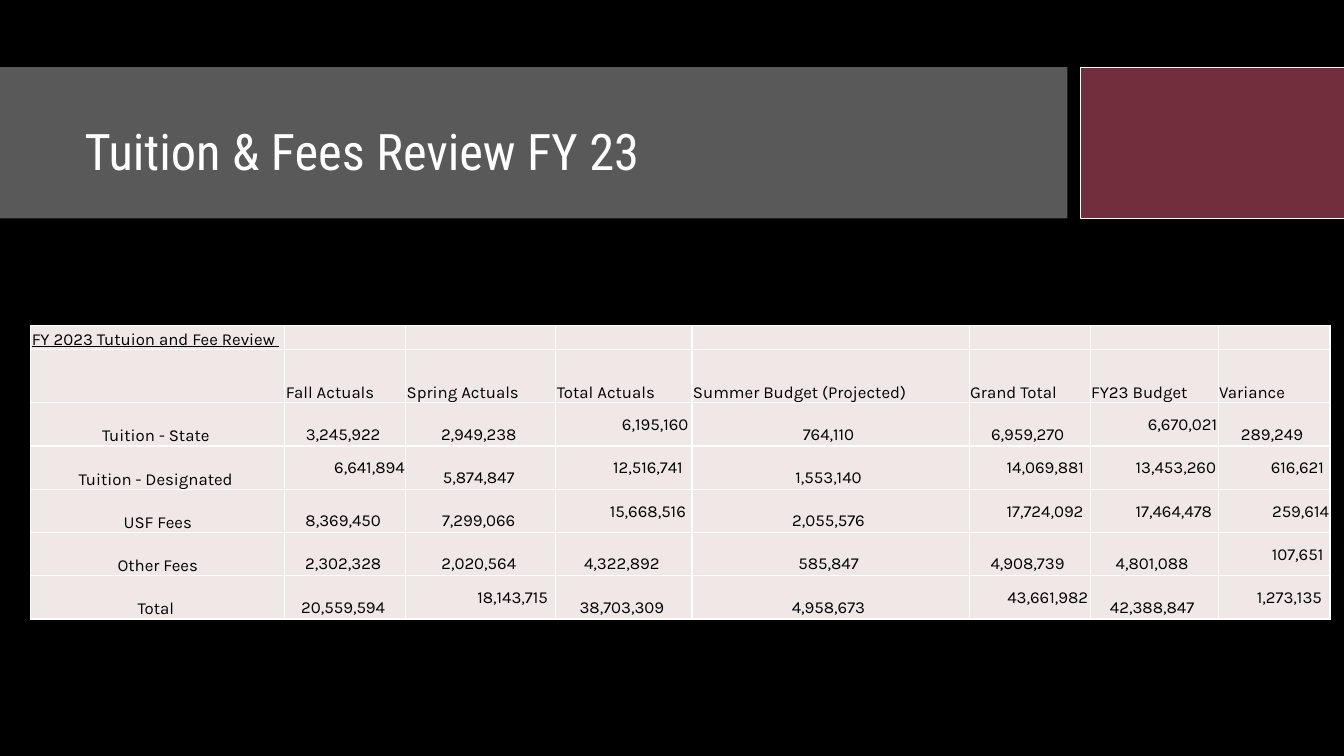
import pptx
import pptx.dml.color
import pptx.enum.shapes
import pptx.enum.text
import pptx.oxml
import pptx.oxml.ns
import pptx.util

Pt = pptx.util.Pt
ALIGN = pptx.enum.text.PP_ALIGN
ANCHOR = pptx.enum.text.MSO_ANCHOR
COLORS = {"black": "000000", "white": "FFFFFF", "grey": "595959",
          "maroon": "722E3C", "cell": "F0E8E7"}
TITLE_FONT, TABLE_FONT = "Roboto Condensed", "Karla"
FONT_SIZE = 12
INSET = 0.72
NAMESPACE = pptx.oxml.ns.nsdecls("a")

COLUMN_WIDTHS = [181.44, 86.4, 107.28, 97.2, 198, 86.4, 91.44, 79.92]
ROW_HEIGHTS = [17.3, 38] + [30.9] * 5
ROWS = [
    ["FY 2023 Tutuion and Fee Review "] + [""] * 7,
    ["", "Fall Actuals", "Spring Actuals", "Total Actuals",
     "Summer Budget (Projected)", "Grand Total", "FY23 Budget", "Variance"],
    ["Tuition - State ", "3,245,922", "2,949,238", "6,195,160",
     "764,110", "6,959,270", "6,670,021", "289,249"],
    ["Tuition - Designated ", "6,641,894", "5,874,847", "12,516,741",
     "1,553,140", "14,069,881", "13,453,260", "616,621"],
    ["USF Fees", "8,369,450", "7,299,066", "15,668,516",
     "2,055,576", "17,724,092", "17,464,478", "259,614"],
    ["Other Fees", "2,302,328", "2,020,564", "4,322,892",
     "585,847", "4,908,739", "4,801,088", "107,651"],
    ["Total ", "20,559,594", "18,143,715", "38,703,309",
     "4,958,673", "43,661,982", "42,388,847", "1,273,135"],
]
# Figures set to the right at mid-height: (row, column) -> right inset
RIGHT_FIGURES = {
    (2, 3): 2.5, (2, 6): 0.7,
    (3, 1): 0.7, (3, 3): 6.5, (3, 5): 4.3, (3, 6): 1.4, (3, 7): 4.3,
    (4, 3): 4.3, (4, 5): 4.7, (4, 6): 4.3, (4, 7): 0.7,
    (5, 7): 4.7,
    (6, 2): 5.7, (6, 5): 1.4, (6, 7): 5.7,
}


def rgb(name):
    return pptx.dml.color.RGBColor.from_string(COLORS[name])


def format_runs(paragraph, font_name, size, color):
    for run in paragraph.runs:
        run.font.name = font_name
        run.font.size = Pt(size)
        run.font.color.rgb = rgb(color)


def add_band(slide, left, top, width, height, color):
    band = slide.shapes.add_shape(pptx.enum.shapes.MSO_SHAPE.RECTANGLE,
                                  Pt(left), Pt(top), Pt(width), Pt(height))
    band.shadow.inherit = False
    band.fill.solid()
    band.fill.fore_color.rgb = rgb(color)
    band.line.fill.background()
    return band


def add_header(slide, left, top, width, height):
    # Grey title band and maroon accent
    grey_width, gap = 762.5, 9.3
    add_band(slide, left, top, grey_width, height, "grey")
    accent_left = left + grey_width + gap
    accent = add_band(slide, accent_left, top, left + width - accent_left,
                      height, "maroon")
    accent.line.color.rgb = rgb("white")
    accent.line.width = Pt(0.5)

    # Title in front of the band
    title = slide.shapes.title
    title.element.getparent().append(title.element)
    title.left, title.top = Pt(left + 53.3), Pt(top + 19.5)
    title.width, title.height = Pt(703.4), Pt(85)
    title.text_frame.text = "Tuition & Fees Review FY 23"
    title.text_frame.word_wrap = True
    title.text_frame.vertical_anchor = ANCHOR.MIDDLE
    paragraph = title.text_frame.paragraphs[0]
    paragraph.alignment = ALIGN.LEFT
    paragraph.line_spacing = 0.9
    format_runs(paragraph, TITLE_FONT, 36, "white")


def style_cell(cell):
    properties = cell._tc.get_or_add_tcPr()
    for side in ("lnL", "lnR", "lnT", "lnB"):
        properties.append(pptx.oxml.parse_xml(
            f'<a:{side} {NAMESPACE} w="12700"><a:solidFill>'
            f'<a:srgbClr val="{COLORS["white"]}"/></a:solidFill></a:{side}>'))
    cell.fill.solid()
    cell.fill.fore_color.rgb = rgb("cell")
    cell.margin_left = cell.margin_right = cell.margin_top = Pt(INSET)
    cell.margin_bottom = 0
    cell.vertical_anchor = ANCHOR.BOTTOM


def fill_cell(cell, row, column, text):
    style_cell(cell)
    paragraph = cell.text_frame.paragraphs[0]
    if not text:
        # Keeps an empty cell from stretching its row
        paragraph._p.append(pptx.oxml.parse_xml(
            f'<a:endParaRPr {NAMESPACE} sz="{FONT_SIZE * 100}"/>'))
        return
    paragraph.text = text
    format_runs(paragraph, TABLE_FONT, FONT_SIZE, "black")
    if row == 0:
        paragraph.runs[0].font.underline = True
    elif (row, column) in RIGHT_FIGURES:
        paragraph.alignment = ALIGN.RIGHT
        cell.margin_right = Pt(RIGHT_FIGURES[row, column])
        cell.vertical_anchor = ANCHOR.MIDDLE
    elif row > 1:
        paragraph.alignment = ALIGN.CENTER
        if column > 0:
            cell.margin_right = Pt(3.6)
            cell.margin_bottom = Pt(1.2)


def add_fee_table(slide, left, top):
    table = slide.shapes.add_table(
        len(ROWS), len(COLUMN_WIDTHS), Pt(left), Pt(top),
        Pt(sum(COLUMN_WIDTHS)), Pt(sum(ROW_HEIGHTS))).table
    table.first_row = table.horz_banding = False
    for column, width in zip(table.columns, COLUMN_WIDTHS):
        column.width = Pt(width)
    for row, height in zip(table.rows, ROW_HEIGHTS):
        row.height = Pt(height)
    for row, texts in enumerate(ROWS):
        for column, text in enumerate(texts):
            fill_cell(table.cell(row, column), row, column, text)


def main():
    presentation = pptx.Presentation()
    presentation.slide_width, presentation.slide_height = Pt(960), Pt(540)
    slide = presentation.slides.add_slide(presentation.slide_layouts[5])
    slide.background.fill.solid()
    slide.background.fill.fore_color.rgb = rgb("black")
    add_header(slide, 0, 48, 969, 108)
    add_fee_table(slide, 22, 232.4)
    presentation.save("out.pptx")


if __name__ == "__main__":
    main()
